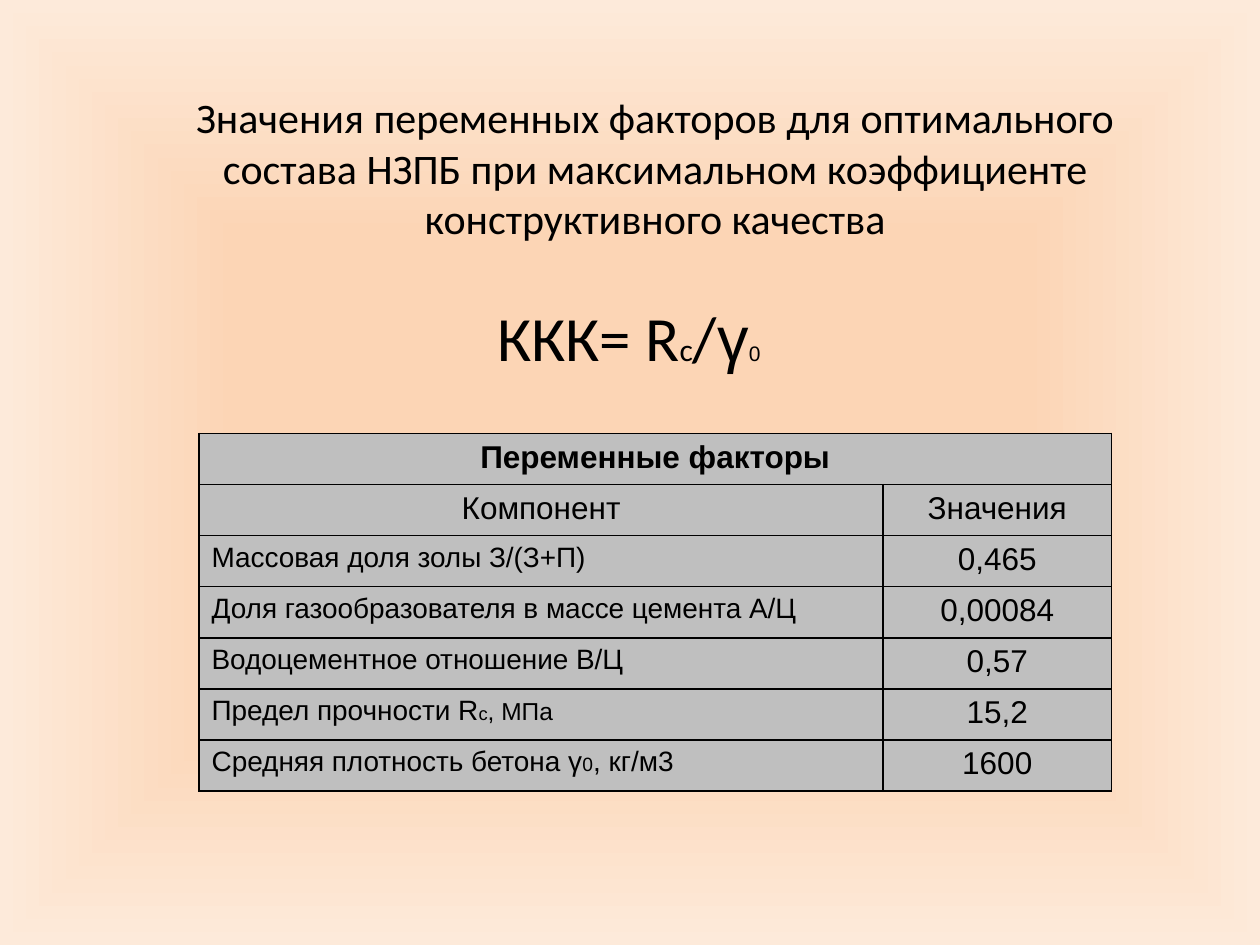
from dataclasses import dataclass

import lxml.etree
import pptx
import pptx.dml.color
import pptx.enum.text
import pptx.oxml
import pptx.oxml.ns
import pptx.util

Inches = pptx.util.Inches
qn = pptx.oxml.ns.qn
CENTER = pptx.enum.text.PP_ALIGN.CENTER
LEFT = pptx.enum.text.PP_ALIGN.LEFT


@dataclass(frozen=True)
class Theme:
    ink: str = "000000"
    cell: str = "BFBFBF"
    glow: str = "FCD5B5"
    edge: str = "FDEADA"
    heading_font: str = "Calibri"
    table_font: str = "Arial"
    title: float = 24
    formula: float = 36
    value: float = 18
    label: float = 16
    border: float = 1


@dataclass(frozen=True)
class Run:
    text: str
    size: float
    font: str
    bold: bool = False


@dataclass(frozen=True)
class Factor:
    label: list[Run]
    value: str


THEME = Theme()


def cell_run(text: str, size: float = THEME.label, bold: bool = False) -> Run:
    return Run(text, size, THEME.table_font, bold)


def heading_run(text: str, size: float) -> Run:
    return Run(text, size, THEME.heading_font)


FACTORS = [
    Factor([cell_run("Массовая доля золы З/(З+П)")], "0,465"),
    Factor([cell_run("Доля газообразователя в массе цемента А/Ц")], "0,00084"),
    Factor([cell_run("Водоцементное отношение В/Ц")], "0,57"),
    Factor([cell_run("Предел прочности R"), cell_run("c", 10.5),
            cell_run(", МПа", 14)], "15,2"),
    Factor([cell_run("Средняя плотность бетона γ"), cell_run("0", 11),
            cell_run(", кг/м3")], "1600"),
]


def write(tf, runs: list[Run], align=CENTER) -> None:
    """Fill the first paragraph with formatted runs."""
    p = tf.paragraphs[0]
    p.alignment = align
    for item in runs:
        r = p.add_run()
        r.text = item.text
        r.font.size = pptx.util.Pt(item.size)
        r.font.name = item.font
        r.font.bold = item.bold
        r.font.color.rgb = pptx.dml.color.RGBColor.from_string(THEME.ink)


def set_background(s) -> None:
    """Rectangular gradient around the slide centre."""
    fill = s.background.fill
    fill.gradient()
    grad = s.background._cSld.find(".//" + qn("a:gradFill"))
    for child in list(grad):
        grad.remove(child)
    stops = lxml.etree.SubElement(grad, qn("a:gsLst"))
    for pos, color, alpha in ((0, THEME.glow, 76), (50, THEME.glow, 100),
                              (100, THEME.edge, 58)):
        stop = lxml.etree.SubElement(stops, qn("a:gs"), pos=str(pos * 1000))
        rgb = lxml.etree.SubElement(stop, qn("a:srgbClr"), val=color)
        if alpha < 100:
            lxml.etree.SubElement(rgb, qn("a:alpha"), val=str(alpha * 1000))
    shade = lxml.etree.SubElement(grad, qn("a:path"), path="shape")
    lxml.etree.SubElement(shade, qn("a:fillToRect"),
                          dict.fromkeys("ltrb", "50000"))


def style_cell(cell) -> None:
    """Grey fill with a thin border on all four sides."""
    cell.fill.solid()
    cell.fill.fore_color.rgb = pptx.dml.color.RGBColor.from_string(THEME.cell)
    tc_pr = cell._tc.get_or_add_tcPr()
    for i, side in enumerate(("lnL", "lnR", "lnT", "lnB")):
        ln = pptx.oxml.parse_xml(
            f'<a:{side} {pptx.oxml.ns.nsdecls("a")} '
            f'w="{pptx.util.Pt(THEME.border)}"><a:solidFill>'
            f'<a:srgbClr val="{THEME.ink}"/></a:solidFill></a:{side}>')
        tc_pr.insert(i, ln)


def add_factor_table(s, factors: list[Factor]) -> None:
    table = s.shapes.add_table(len(factors) + 2, 2, Inches(1.58), Inches(3.44),
                               Inches(7.24), Inches(2.84)).table
    table.first_row = table.horz_banding = False
    for column, width in zip(table.columns, (5.43, 1.81)):
        column.width = Inches(width)
    for cell in table.iter_cells():
        style_cell(cell)

    # Merged heading and column names
    table.cell(0, 0).merge(table.cell(0, 1))
    write(table.cell(0, 0).text_frame,
          [cell_run("Переменные факторы", THEME.value, True)])
    for col, name in enumerate(("Компонент", "Значения")):
        write(table.cell(1, col).text_frame, [cell_run(name, THEME.value)])

    # Factors
    for row, factor in enumerate(factors, start=2):
        write(table.cell(row, 0).text_frame, factor.label, LEFT)
        write(table.cell(row, 1).text_frame,
              [cell_run(factor.value, THEME.value)])


def main() -> None:
    prs = pptx.Presentation()
    prs.slide_width, prs.slide_height = Inches(10), Inches(7.5)
    s = prs.slides.add_slide(prs.slide_layouts[5])
    set_background(s)

    # Title
    sp = s.shapes.title
    sp.left, sp.top = Inches(1.06), Inches(0.68)
    sp.width, sp.height = Inches(8.28), Inches(1.31)
    tf = sp.text_frame
    tf.vertical_anchor = pptx.enum.text.MSO_ANCHOR.TOP
    tf.auto_size = pptx.enum.text.MSO_AUTO_SIZE.SHAPE_TO_FIT_TEXT
    write(tf, [heading_run("Значения переменных факторов для оптимального "
                           "состава НЗПБ при максимальном коэффициенте "
                           "конструктивного качества", THEME.title)])

    add_factor_table(s, FACTORS)

    # Formula
    tf = s.shapes.add_textbox(Inches(0.85), Inches(2.32),
                              Inches(8.28), Inches(0.71)).text_frame
    tf.word_wrap = True
    tf.auto_size = pptx.enum.text.MSO_AUTO_SIZE.SHAPE_TO_FIT_TEXT
    write(tf, [heading_run("ККК= R", THEME.formula),
               heading_run("c", 18),
               heading_run("/", THEME.formula),
               Run("γ", THEME.formula, THEME.table_font),
               Run("0", 12, THEME.table_font)])

    prs.save("out.pptx")


if __name__ == "__main__":
    main()
